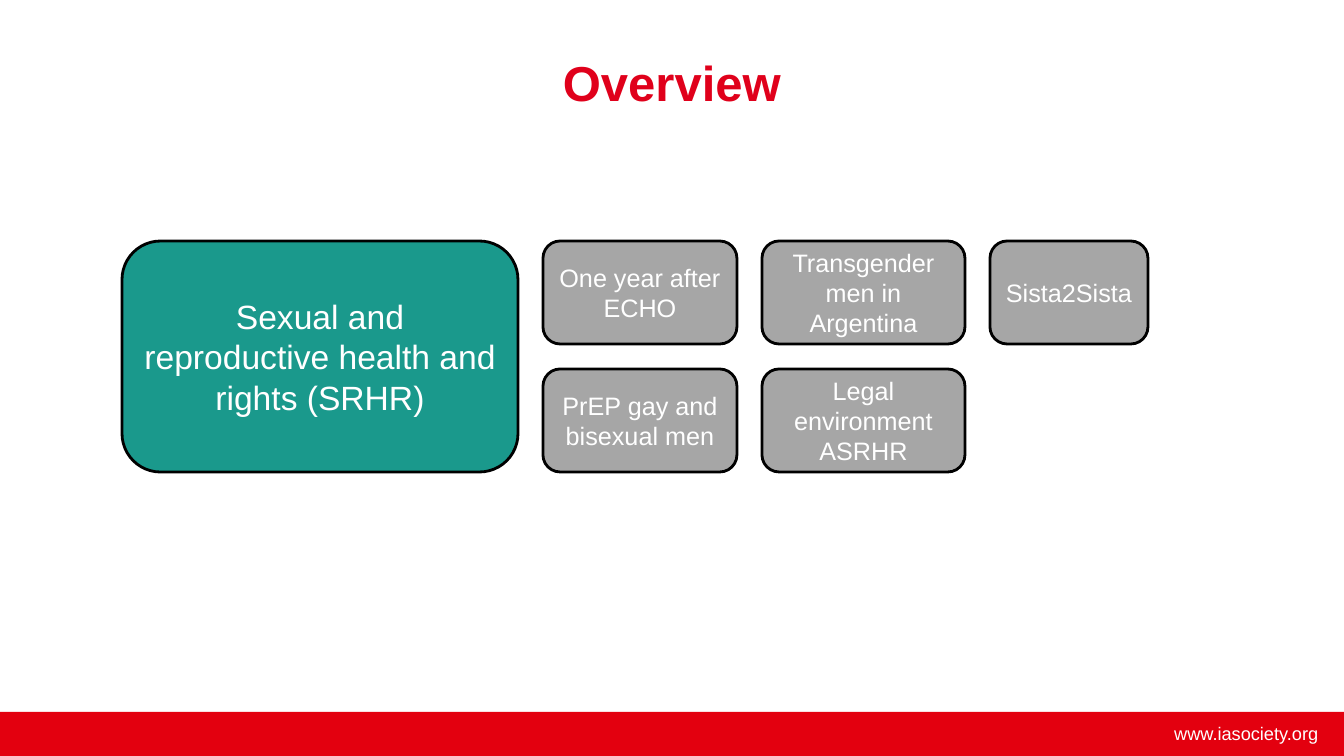
from dataclasses import dataclass

from pptx import Presentation
from pptx.dml.color import RGBColor
from pptx.enum.shapes import MSO_SHAPE
from pptx.enum.text import MSO_ANCHOR, MSO_AUTO_SIZE, PP_ALIGN
from pptx.util import Pt

TITLE = "Overview"
TOPIC = "Sexual and reproductive health and rights (SRHR)"
# Each column: width in px, then its sessions from top to bottom
SESSION_COLUMNS = [
    (194, ["One year after ECHO", "PrEP gay and bisexual men"]),
    (203, ["Transgender men in Argentina", "Legal environment ASRHR"]),
    (158, ["Sista2Sista"]),
]
WEBSITE = "www.iasociety.org"

SLIDE_W, SLIDE_H = 1344, 756
FOOTER_H = 44
TOPIC_LEFT, TOPIC_TOP, TOPIC_W = 122, 241, 396
SESSION_H, GAP = 103, 25


@dataclass(frozen=True)
class Theme:
    font: str = "Arial"
    title: str = "E0001B"
    footer: str = "E3000F"
    topic: str = "1A998C"
    session: str = "A6A6A6"
    outline: str = "000000"
    text: str = "FFFFFF"
    title_size: int = 35
    topic_size: int = 24
    session_size: int = 18
    footer_size: int = 13
    outline_width: int = 2


THEME = Theme()


def px(length):
    return round(length * 914400 / 100.8)


def box(left, top, width, height):
    return [px(length) for length in (left, top, width, height)]


def write(shape, text, size, color=THEME.text, align=PP_ALIGN.CENTER,
          anchor=MSO_ANCHOR.MIDDLE, bold=False):
    frame = shape.text_frame
    frame.text = text
    frame.word_wrap = True
    frame.auto_size = MSO_AUTO_SIZE.NONE
    frame.vertical_anchor = anchor
    paragraph = frame.paragraphs[0]
    paragraph.alignment = align
    font = paragraph.runs[0].font
    font.name, font.size, font.bold = THEME.font, Pt(size), bold
    font.color.rgb = RGBColor.from_string(color)


def add_filled(slide, preset, place, fill):
    shape = slide.shapes.add_shape(preset, *place)
    shape.shadow.inherit = False
    shape.fill.solid()
    shape.fill.fore_color.rgb = RGBColor.from_string(fill)
    shape.line.fill.background()
    return shape


def add_card(slide, place, text, fill, size):
    card = add_filled(slide, MSO_SHAPE.ROUNDED_RECTANGLE, place, fill)
    card.line.color.rgb = RGBColor.from_string(THEME.outline)
    card.line.width = Pt(THEME.outline_width)
    write(card, text, size)


def add_footer(slide):
    add_filled(slide, MSO_SHAPE.RECTANGLE,
               box(0, SLIDE_H - FOOTER_H, SLIDE_W, FOOTER_H), THEME.footer)
    website = slide.shapes.add_textbox(*box(1051, 717, 277, 32))
    write(website, WEBSITE, THEME.footer_size, align=PP_ALIGN.RIGHT,
          anchor=MSO_ANCHOR.TOP)


def add_title(slide):
    title = slide.shapes.title
    title.left, title.top, title.width, title.height = box(168, 0, 1008, 163)
    write(title, TITLE, THEME.title_size, THEME.title, bold=True)


def add_overview(slide):
    topic_h = 2 * SESSION_H + GAP
    add_card(slide, box(TOPIC_LEFT, TOPIC_TOP, TOPIC_W, topic_h),
             TOPIC, THEME.topic, THEME.topic_size)
    left = TOPIC_LEFT + TOPIC_W + GAP
    for width, sessions in SESSION_COLUMNS:
        for row, session in enumerate(sessions):
            top = TOPIC_TOP + row * (SESSION_H + GAP)
            add_card(slide, box(left, top, width, SESSION_H),
                     session, THEME.session, THEME.session_size)
        left += width + GAP


def main():
    presentation = Presentation()
    presentation.slide_width, presentation.slide_height = px(SLIDE_W), px(SLIDE_H)
    slide = presentation.slides.add_slide(presentation.slide_layouts[5])
    add_footer(slide)
    add_title(slide)
    add_overview(slide)
    presentation.save("out.pptx")


if __name__ == "__main__":
    main()
